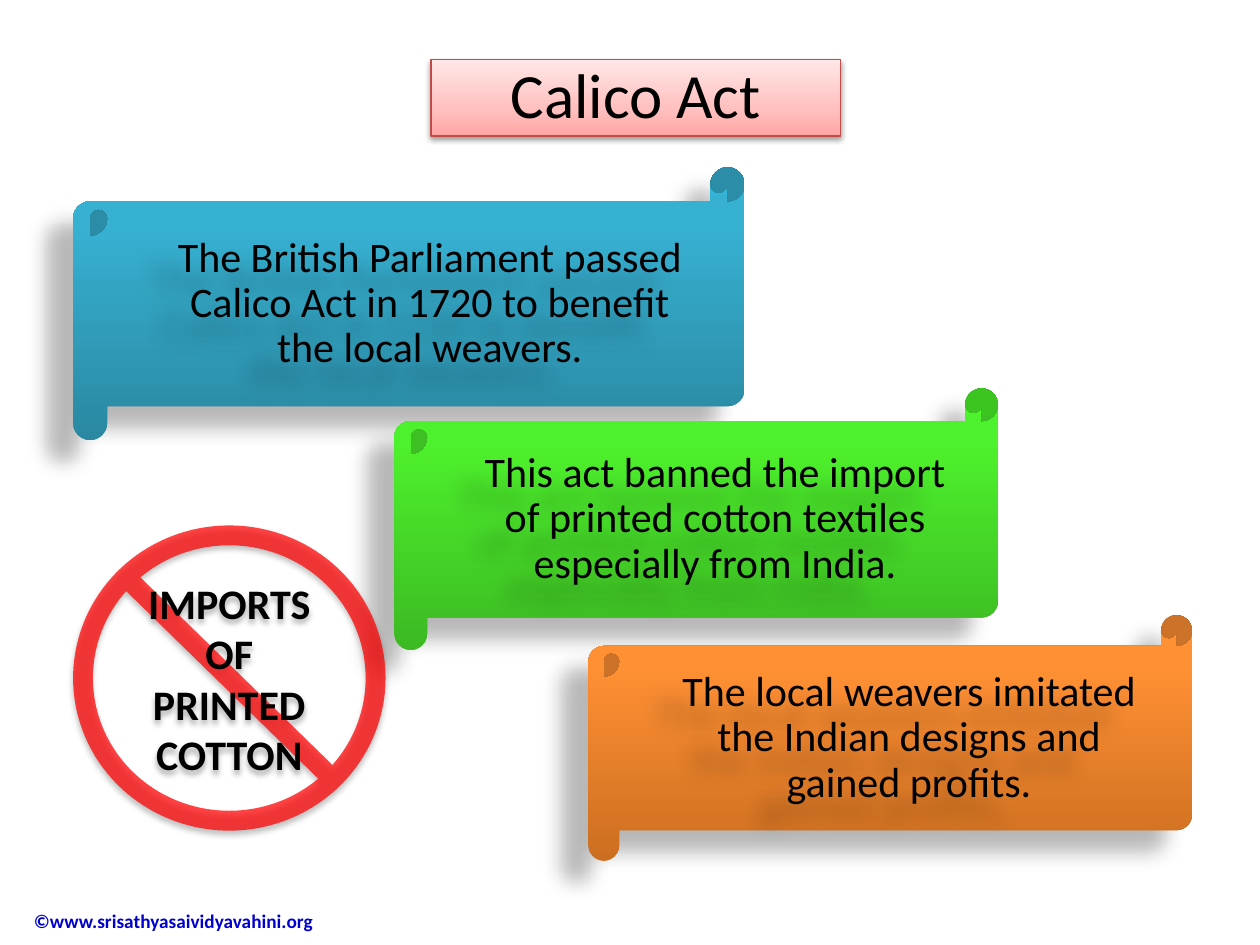
import pptx
import pptx.dml.color
import pptx.enum.shapes
import pptx.enum.text
import pptx.oxml
import pptx.oxml.ns
import pptx.util

W, H = 10, 7.5
SHAPE = pptx.enum.shapes.MSO_SHAPE
ALIGN = pptx.enum.text.PP_ALIGN
C = {
    "ink": "000000", "ban": "FF0000", "footer": "0000CC", "title_line": "BF4C48",
    "title": [(0, "FFA6A5"), (35, "FFC0BF"), (100, "FFE7E7")],
    "blue": [(0, "2A88A2"), (80, "37B1D2"), (100, "34B4D6")],
    "green": [(0, "3CB923"), (80, "4EF12D"), (100, "4CF52A")],
    "orange": [(0, "CC6E20"), (80, "FF9034"), (100, "FF9136")],
}
SCROLL_SHADOW = (28, 11.8, 19.7, 141)
SCROLLS = [
    ("blue", (0.058, 0.177, 0.533, 0.289),
     "The British Parliament passed Calico Act in 1720 to benefit the local weavers."),
    ("green", (0.313, 0.411, 0.479, 0.277),
     "This act banned the import of printed cotton textiles especially from India."),
    ("orange", (0.467, 0.651, 0.479, 0.26),
     "The local weavers imitated the Indian designs and gained profits."),
]


def rgb(color):
    """Return the colour object for a hex string."""
    return pptx.dml.color.RGBColor.from_string(color)


def place(x, y, w, h):
    """Turn shares of the slide's size into lengths."""
    return [pptx.util.Inches(v) for v in (x * W, y * H, w * W, h * H)]


def xml(tag, attrs, inner=""):
    """Build one DrawingML element."""
    return pptx.oxml.parse_xml(
        f'<a:{tag} {pptx.oxml.ns.nsdecls("a")} {attrs}>{inner}</a:{tag}>')


def add_shadow(sp, alpha, blur, dist, angle):
    """Give a shape a soft outer shadow."""
    sp.shadow.inherit = False
    effects = sp._element.spPr.find(pptx.oxml.ns.qn("a:effectLst"))
    effects.append(xml(
        "outerShdw",
        f'blurRad="{pptx.util.Pt(blur)}" dist="{pptx.util.Pt(dist)}" '
        f'dir="{angle * 60000}" algn="tl" rotWithShape="0"',
        f'<a:srgbClr val="{C["ink"]}"><a:alpha val="{alpha * 1000}"/></a:srgbClr>'))


def fill_gradient(sp, stops):
    """Fill a shape with a gradient that rises from its bottom."""
    sp.fill.gradient()
    sp.fill.gradient_angle = 90
    gs_list = sp._element.spPr.find(".//" + pptx.oxml.ns.qn("a:gsLst"))
    for gs in list(gs_list):
        gs_list.remove(gs)
    for pos, color in stops:
        gs_list.append(xml("gs", f'pos="{pos * 1000}"', f'<a:srgbClr val="{color}"/>'))


def write(sp, text, size=24, color=C["ink"], bold=False, align=ALIGN.CENTER,
          spacing=None, inset=0.1, level=0, indent=0):
    """Write one formatted paragraph into a shape."""
    tf = sp.text_frame
    tf.word_wrap = True
    tf.vertical_anchor = pptx.enum.text.MSO_ANCHOR.MIDDLE
    tf.margin_left = tf.margin_right = pptx.util.Inches(0.1)
    tf.margin_top = tf.margin_bottom = pptx.util.Inches(inset)
    p = tf.paragraphs[0]
    p.alignment, p.level = align, level
    if spacing:
        p.line_spacing = spacing
    if indent:
        p._p.get_or_add_pPr().set("marL", str(pptx.util.Inches(indent)))
    r = p.add_run()
    r.text = text
    r.font.name, r.font.size, r.font.bold = "Calibri", pptx.util.Pt(size), bold
    r.font.color.rgb = rgb(color)


def add_footer(s):
    """Add the copyright line."""
    sp = s.shapes.add_textbox(*place(-0.033, 0.947, 0.302, 0.055))
    write(sp, "©www.srisathyasaividyavahini.org", size=11, color=C["footer"],
          bold=True, align=ALIGN.LEFT, inset=0.05, level=1, indent=0.5)


def add_scroll(s, stops, box, text):
    """Add a scroll grouped with its text box."""
    x, y, w, h = box
    group = s.shapes.add_group_shape()
    sp = group.shapes.add_shape(SHAPE.HORIZONTAL_SCROLL, *place(*box))
    fill_gradient(sp, stops)
    sp.line.fill.background()
    add_shadow(sp, *SCROLL_SHADOW)
    label = group.shapes.add_textbox(
        *place(x + w / 8, y + h / 8, w * 13 / 16, h * 3 / 4))
    write(label, text, spacing=0.9)
    add_shadow(label, *SCROLL_SHADOW)


def add_title(s):
    """Add the title plate."""
    sp = s.shapes.add_shape(SHAPE.RECTANGLE, *place(0.342, 0.063, 0.325, 0.081))
    fill_gradient(sp, C["title"])
    sp.line.color.rgb = rgb(C["title_line"])
    sp.line.width = pptx.util.Pt(0.75)
    add_shadow(sp, 38, 3.1, 1.6, 90)
    write(sp, "Calico Act", size=36, spacing=0.9)


def add_ban_sign(s):
    """Add the prohibition sign."""
    sp = s.shapes.add_shape(SHAPE.NO_SYMBOL, *place(0.058, 0.556, 0.248, 0.323))
    sp.adjustments[0] = 0.065
    sp.fill.solid()
    sp.fill.fore_color.rgb = rgb(C["ban"])
    color = sp._element.spPr.find(".//" + pptx.oxml.ns.qn("a:srgbClr"))
    color.append(xml("alpha", 'val="73000"'))
    sp.line.fill.background()
    add_shadow(sp, 32, 3.5, 2.2, 90)
    write(sp, "IMPORTS OF PRINTED COTTON", bold=True, inset=0.05)


def main():
    """Build and save the slide."""
    prs = pptx.Presentation()
    prs.slide_width, prs.slide_height = pptx.util.Inches(W), pptx.util.Inches(H)
    s = prs.slides.add_slide(prs.slide_layouts[6])
    add_footer(s)
    for color, box, text in SCROLLS:
        add_scroll(s, C[color], box, text)
    add_title(s)
    add_ban_sign(s)
    prs.save("out.pptx")


if __name__ == "__main__":
    main()
